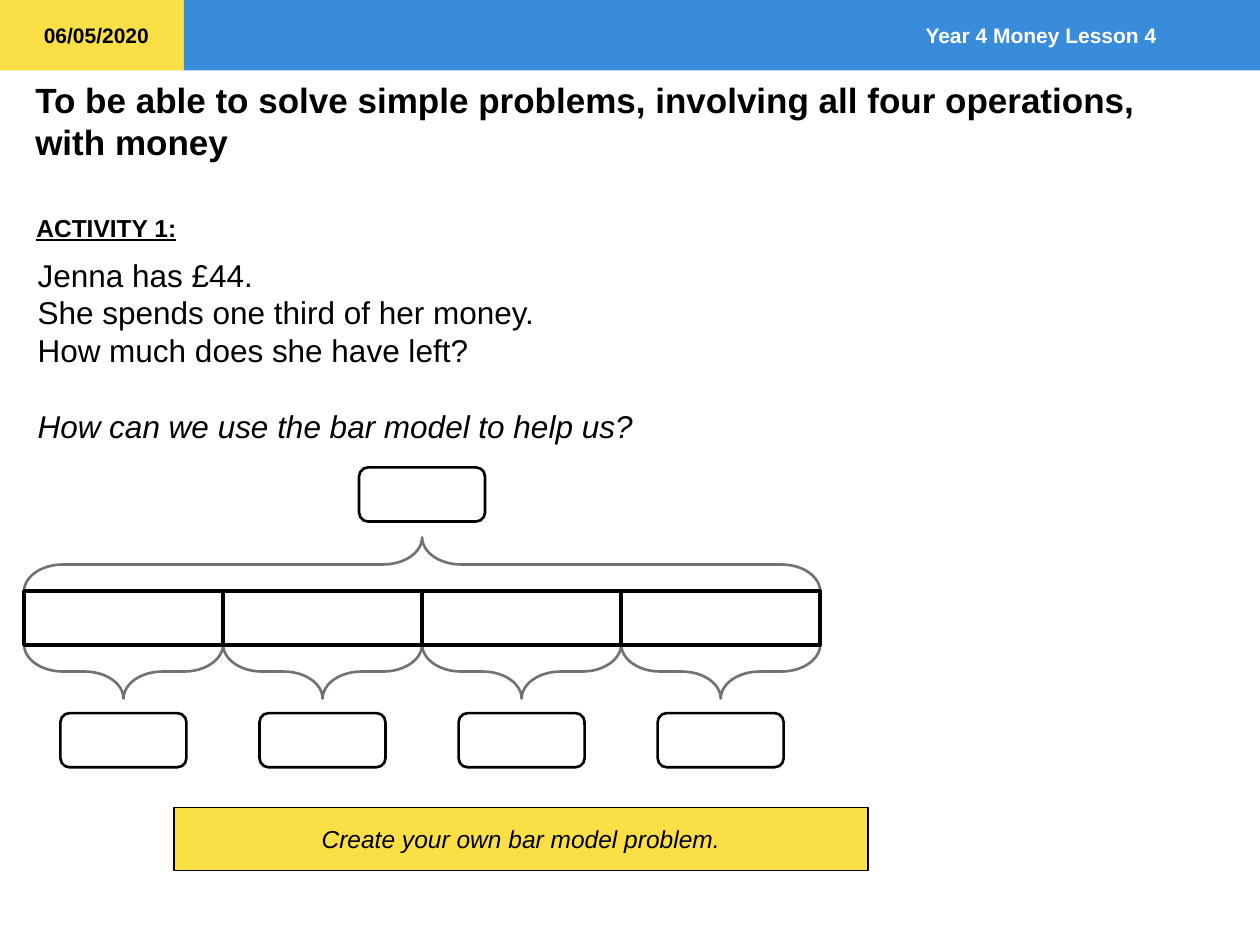
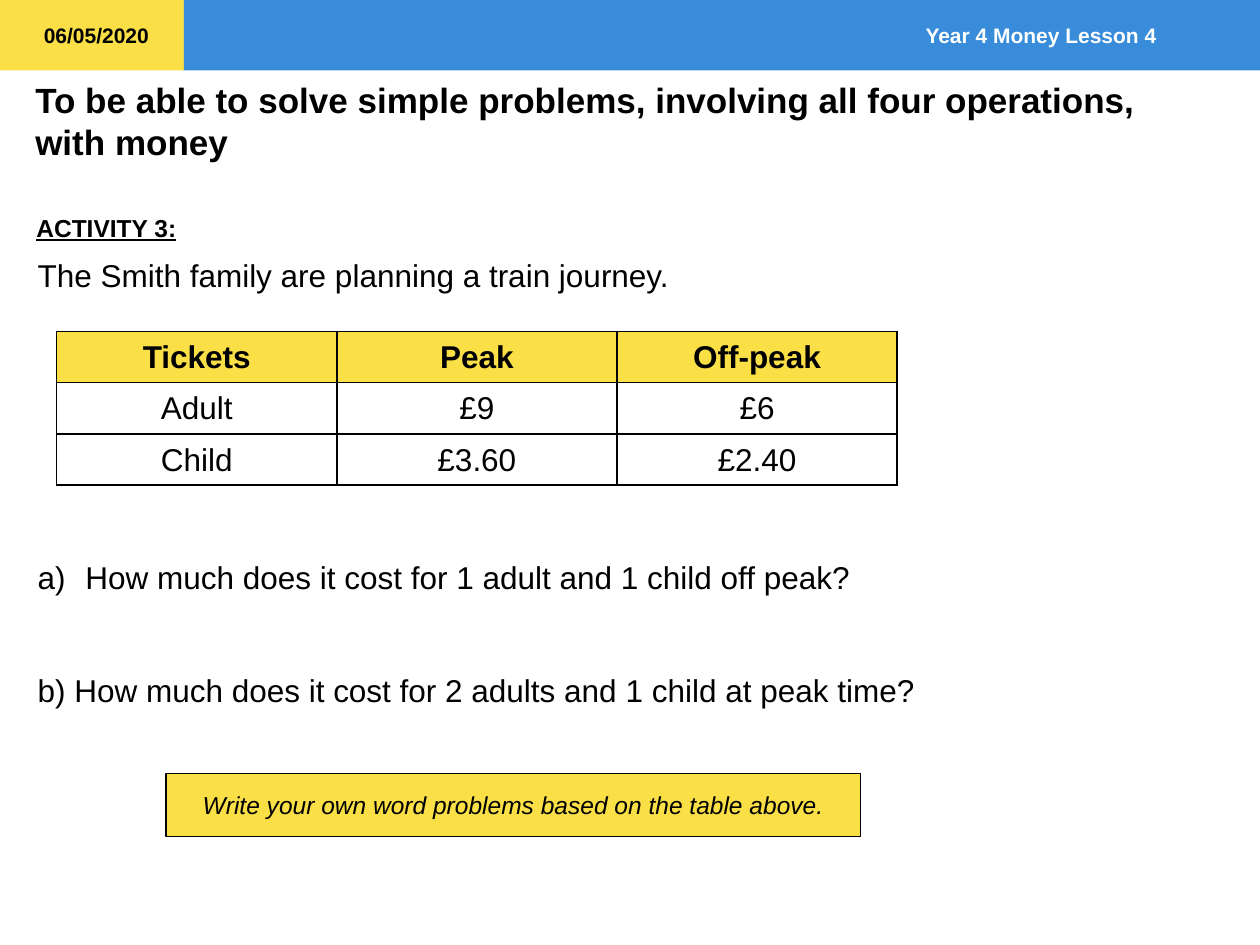
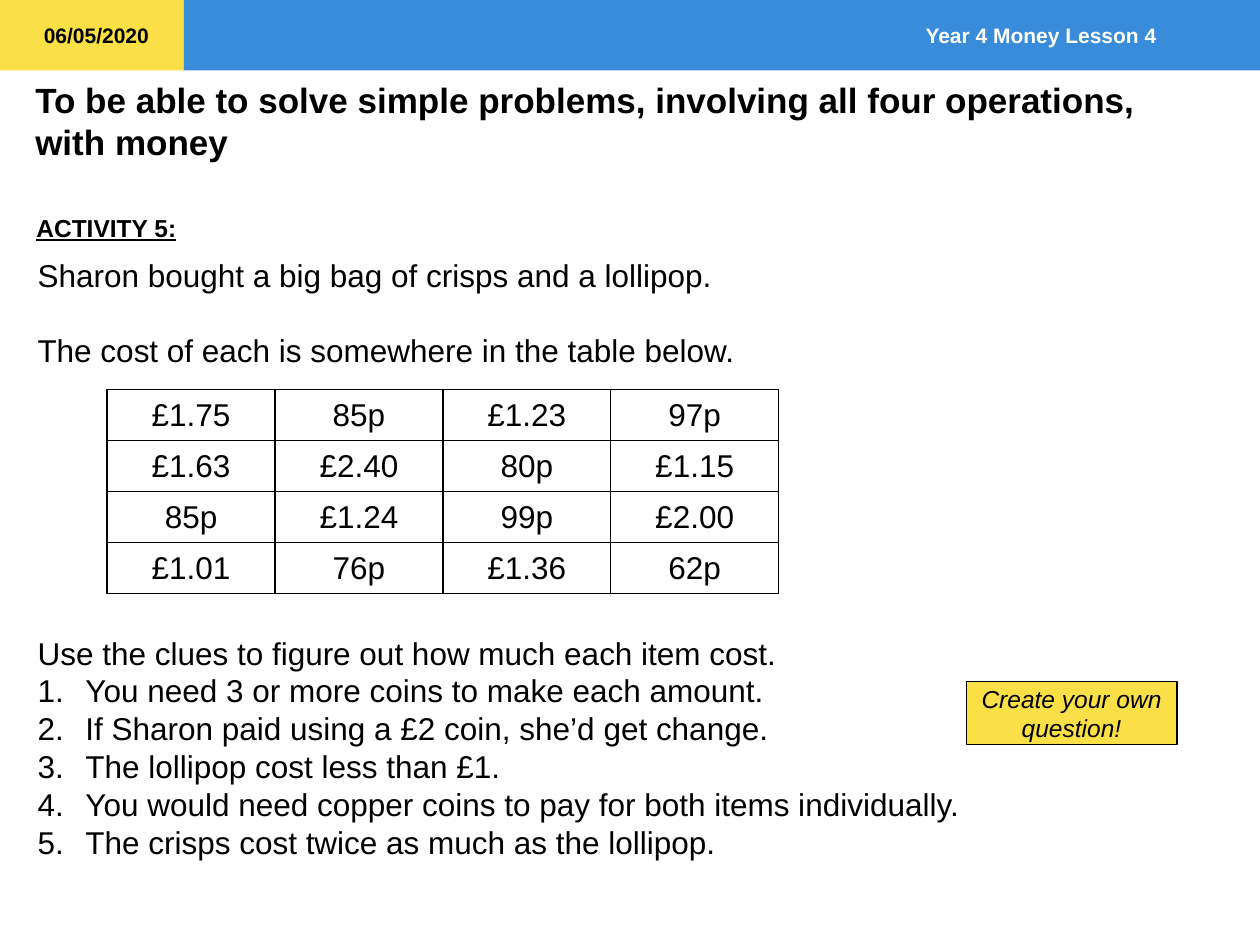
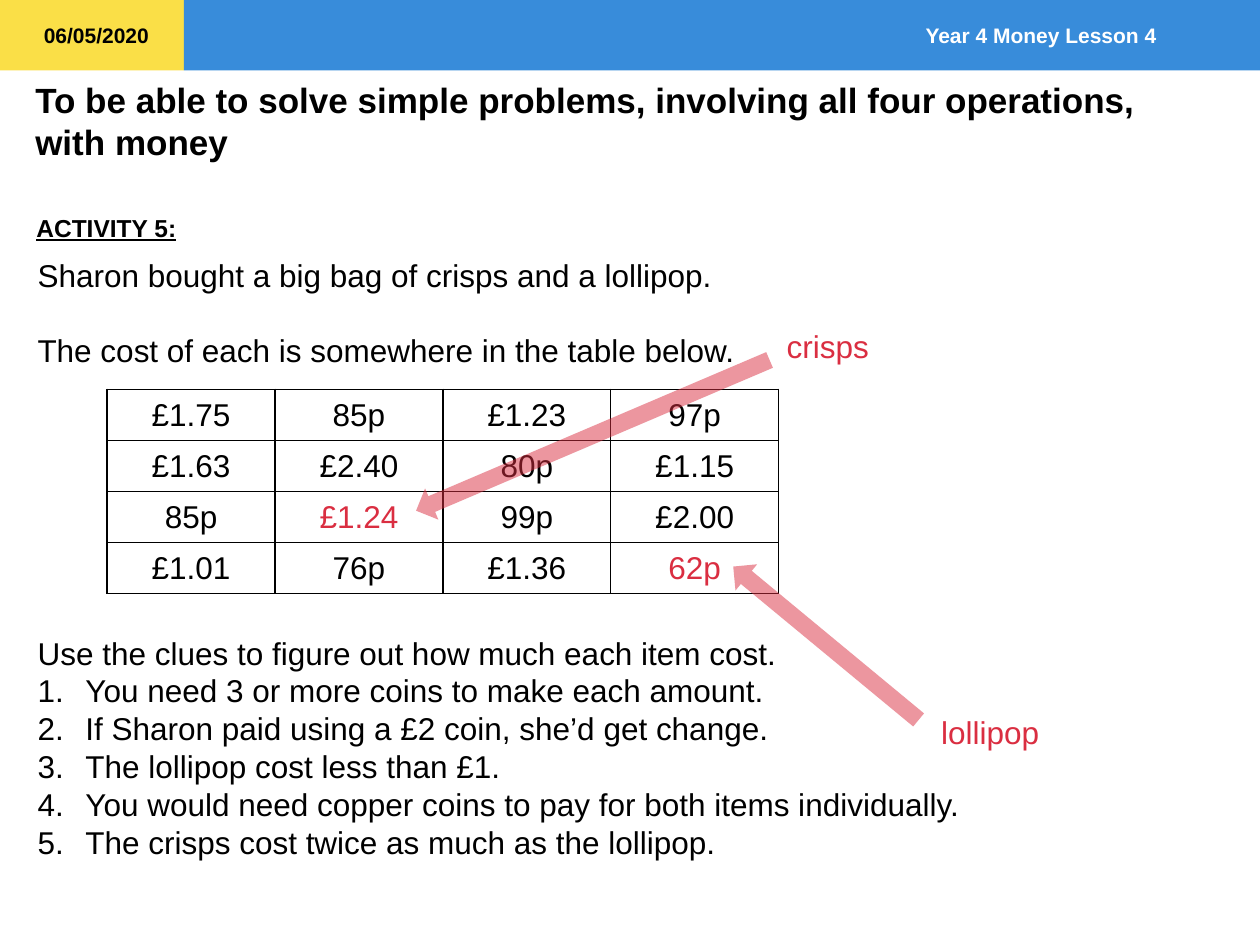
from pptx import Presentation
from pptx.dml.color import RGBColor
from pptx.enum.shapes import MSO_SHAPE as SHAPE
from pptx.enum.text import MSO_ANCHOR as ANCHOR, MSO_AUTO_SIZE as FIT, PP_ALIGN as ALIGN
from pptx.oxml import parse_xml
from pptx.oxml.ns import nsdecls, qn
from pptx.util import Inches, Pt

YELLOW = RGBColor(0xFA, 0xDF, 0x47)
BLUE = RGBColor(0x38, 0x8C, 0xDA)
RED = RGBColor(0xDA, 0x2E, 0x41)
GREY = RGBColor(0x76, 0x71, 0x71)
BLACK = RGBColor(0, 0, 0)
WHITE = RGBColor(0xFF, 0xFF, 0xFF)

FONT = "Arial"
BODY_SIZE = 18
LINE_FACTOR = 1.2
TITLE_ONLY = 5
HANGING = Inches(0.38)

DATE = "06/05/2020"
LESSON = "Year 4 Money Lesson 4"
OBJECTIVE = "To be able to solve simple problems, involving all four operations, \vwith money"

TICKETS = [
    ["Tickets", "Peak", "Off-peak"],
    ["Adult", "£9", "£6"],
    ["Child", "£3.60", "£2.40"],
]
PRICES = [
    ["£1.75", "85p", "£1.23", "97p"],
    ["£1.63", "£2.40", "80p", "£1.15"],
    ["85p", "£1.24", "99p", "£2.00"],
    ["£1.01", "76p", "£1.36", "62p"],
]
CLUES = [
    "You need 3 or more coins to make each amount.",
    "If Sharon paid using a £2 coin, she’d get change.",
    "The lollipop cost less than £1.",
    "You would need copper coins to pay for both items individually.",
    "The crisps cost twice as much as the lollipop.",
]


def style(paragraph, size, color=BLACK, align=ALIGN.LEFT, bold=False, italic=False, underline=False):
    paragraph.alignment = align
    paragraph.line_spacing = Pt(size * LINE_FACTOR)
    paragraph.space_before = paragraph.space_after = Pt(0)
    font = paragraph.font
    font.name, font.size, font.color.rgb = FONT, Pt(size), color
    font.bold, font.italic, font.underline = bold, italic, underline


def number(paragraph, scheme):
    """Give the paragraph an automatic number and a hanging indent."""
    props = paragraph._p.get_or_add_pPr()
    props.set("marL", str(HANGING))
    props.set("indent", str(-HANGING))
    numbering = parse_xml(f'<a:buAutoNum {nsdecls("a")} type="{scheme}"/>')
    props.insert_element_before(numbering, "a:tabLst", "a:defRPr", "a:extLst")


def add_shape(slide, kind, left, top, width, height, fill=None, line=None, weight=1):
    shape = slide.shapes.add_shape(kind, Inches(left), Inches(top), Inches(width), Inches(height))
    shape.shadow.inherit = False
    if fill is None:
        shape.fill.background()
    else:
        shape.fill.solid()
        shape.fill.fore_color.rgb = fill
    if line is None:
        shape.line.fill.background()
    else:
        shape.line.color.rgb = line
        shape.line.width = Pt(weight)
    return shape


def add_label(slide, text, left, top, width, height, size, **look):
    """Add a single line of text that does not wrap."""
    box = slide.shapes.add_textbox(Inches(left), Inches(top), Inches(width), Inches(height))
    box.text_frame.word_wrap = False
    box.text_frame.auto_size = FIT.SHAPE_TO_FIT_TEXT
    box.text_frame.text = text
    style(box.text_frame.paragraphs[0], size, **look)


def add_body(slide, width, height, items):
    """Add body text; an item is (text, empty lines above, numbering scheme, italic)."""
    box = slide.shapes.add_textbox(Inches(0.2), Inches(1.98), Inches(width), Inches(height))
    frame = box.text_frame
    frame.word_wrap = True
    for index, (text, lines_above, scheme, italic) in enumerate(items):
        paragraph = frame.add_paragraph() if index else frame.paragraphs[0]
        paragraph.text = text
        style(paragraph, BODY_SIZE, italic=italic)
        paragraph.space_before = Pt(lines_above * BODY_SIZE * LINE_FACTOR)
        if scheme:
            number(paragraph, scheme)


def add_challenge(slide, text, left, top, width):
    box = add_shape(slide, SHAPE.RECTANGLE, left, top, width, 0.5, YELLOW, BLACK)
    box.text_frame.vertical_anchor = ANCHOR.MIDDLE
    box.text_frame.word_wrap = True
    box.text_frame.text = text
    style(box.text_frame.paragraphs[0], 14, align=ALIGN.CENTER, italic=True)


def add_brace(slide, center_x, center_y, span, rotation):
    depth = 0.43
    brace = add_shape(slide, SHAPE.RIGHT_BRACE, center_x - depth / 2, center_y - span / 2,
                      depth, span, line=GREY, weight=1.5)
    brace.adjustments[0] = 0.72
    brace.adjustments[1] = 0.5
    brace.rotation = rotation


def add_answer_box(slide, center_x, top):
    add_shape(slide, SHAPE.ROUNDED_RECTANGLE, center_x - 0.5, top, 1, 0.43, line=BLACK, weight=1.5)


def add_bar_model(slide, parts):
    left, top, pitch = 0.19, 4.69, 1.58
    middle = left + parts * pitch / 2
    add_answer_box(slide, middle, 3.71)
    add_brace(slide, middle, 4.48, parts * pitch, 270)
    for part in range(parts):
        center = left + (part + 0.5) * pitch
        add_brace(slide, center, 5.33, pitch, 90)
        add_answer_box(slide, center, 5.66)
        add_shape(slide, SHAPE.RECTANGLE, left + part * pitch, top, pitch, 0.43, line=BLACK, weight=2)


def add_borders(cell):
    props = cell._tc.get_or_add_tcPr()
    for side in ("lnL", "lnR", "lnT", "lnB"):
        props.append(parse_xml(
            f'<a:{side} {nsdecls("a")} w="{Pt(1)}"><a:solidFill><a:srgbClr val="{BLACK}"/>'
            f'</a:solidFill></a:{side}>'))


def add_grid(slide, rows, left, top, width, height, header=False, answers=()):
    """Add a bordered table; cells whose text is in answers are red."""
    table = slide.shapes.add_table(len(rows), len(rows[0]), Inches(left), Inches(top),
                                   Inches(width), Inches(height)).table
    table.first_row = table.horz_banding = False
    for r, row in enumerate(rows):
        for c, text in enumerate(row):
            cell = table.cell(r, c)
            is_header = header and r == 0
            add_borders(cell)
            if is_header:
                cell.fill.solid()
                cell.fill.fore_color.rgb = YELLOW
            else:
                cell.fill.background()
            cell.text = text
            style(cell.text_frame.paragraphs[0], BODY_SIZE, RED if text in answers else BLACK,
                  ALIGN.CENTER, bold=is_header)


def add_pointer(slide, left, top, length, rotation):
    arrow = add_shape(slide, SHAPE.RIGHT_ARROW, left, top, length, 0.27, RED)
    arrow.rotation = rotation
    color = arrow._element.spPr.find(qn("a:solidFill")).find(qn("a:srgbClr"))
    color.append(parse_xml(f'<a:alpha {nsdecls("a")} val="50000"/>'))


def add_lesson_slide(prs, activity):
    """Add a slide with the lesson's bands, date, objective and activity heading."""
    slide = prs.slides.add_slide(prs.slide_layouts[TITLE_ONLY])
    add_shape(slide, SHAPE.RECTANGLE, 0, 0, 1.46, 0.56, YELLOW)
    band = add_shape(slide, SHAPE.RECTANGLE, 1.46, 0, 8.54, 0.56, BLUE)
    band.text_frame.vertical_anchor = ANCHOR.MIDDLE
    band.text_frame.margin_right = Inches(0.82)
    band.text_frame.text = LESSON
    style(band.text_frame.paragraphs[0], 12, WHITE, ALIGN.RIGHT, bold=True)

    title = slide.shapes.title
    title.left, title.top = Inches(0.18), Inches(0.57)
    title.width, title.height = Inches(9.77), Inches(0.77)
    title.text_frame.vertical_anchor = ANCHOR.TOP
    title.text_frame.auto_size = FIT.NONE
    title.text_frame.text = OBJECTIVE
    style(title.text_frame.paragraphs[0], 20, bold=True)

    add_label(slide, DATE, 0.25, 0.13, 1.04, 0.3, 12, bold=True)
    add_label(slide, f"ACTIVITY {activity}:", 0.19, 1.64, 1.32, 0.34, 14, bold=True, underline=True)
    return slide


def add_bar_model_slide(prs):
    slide = add_lesson_slide(prs, 1)
    add_body(slide, 9.8, 1.62, [
        ("Jenna has £44.", 0, None, False),
        ("She spends one third of her money. \vHow much does she have left?", 0, None, False),
        ("How can we use the bar model to help us?", 1, None, True),
    ])
    add_bar_model(slide, 4)
    add_challenge(slide, "Create your own bar model problem.", 1.38, 6.41, 5.51)


def add_train_slide(prs):
    slide = add_lesson_slide(prs, 3)
    add_body(slide, 7.18, 5.25, [
        ("The Smith family are planning a train journey.", 0, None, False),
        ("How much does it cost for 1 adult and 1 child off peak?", 7, "alphaLcParenR", False),
        ("b) How much does it cost for 2 adults and 1 child at peak time?", 2, None, False),
    ])
    add_grid(slide, TICKETS, 0.45, 2.63, 6.67, 1.22, header=True)
    add_challenge(slide, "Write your own word problems based on the table above.", 1.32, 6.14, 5.51)


def add_clues_slide(prs, answers=()):
    slide = add_lesson_slide(prs, 5)
    add_body(slide, 7.6, 5.55, [
        ("Sharon bought a big bag of crisps and a lollipop.", 0, None, False),
        ("The cost of each is somewhere in the table below.", 1, None, False),
        ("Use the clues to figure out how much each item cost.", 7, None, False),
        *((clue, 0, "arabicPeriod", False) for clue in CLUES),
    ])
    add_grid(slide, PRICES, 0.85, 3.09, 5.33, 1.62, answers=answers)
    return slide


def main():
    prs = Presentation()
    prs.slide_width, prs.slide_height = Inches(10), Inches(7.5)

    add_bar_model_slide(prs)
    add_train_slide(prs)

    question = add_clues_slide(prs)
    add_challenge(question, "Create your own question!", 7.67, 5.41, 1.67)

    solution = add_clues_slide(prs, answers=("£1.24", "62p"))
    add_pointer(solution, 3.18, 3.32, 3.05, 156.9)
    add_label(solution, "crisps", 6.14, 2.55, 0.86, 0.4, BODY_SIZE, color=RED, align=ALIGN.CENTER)
    add_pointer(solution, 5.6, 4.97, 1.91, 219.6)
    add_label(solution, "lollipop", 7.37, 5.61, 0.99, 0.4, BODY_SIZE, color=RED)

    prs.save("out.pptx")


if __name__ == "__main__":
    main()
